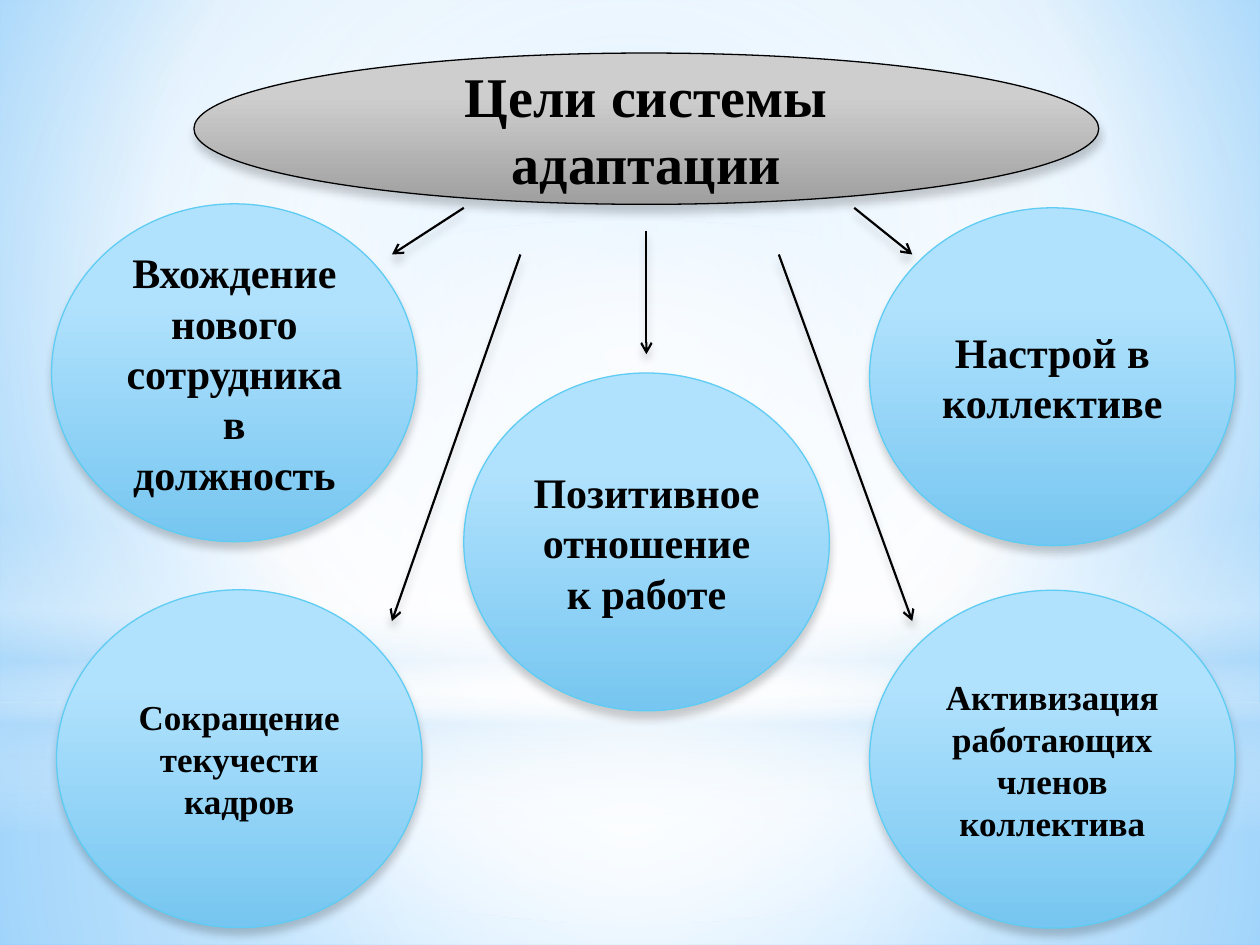
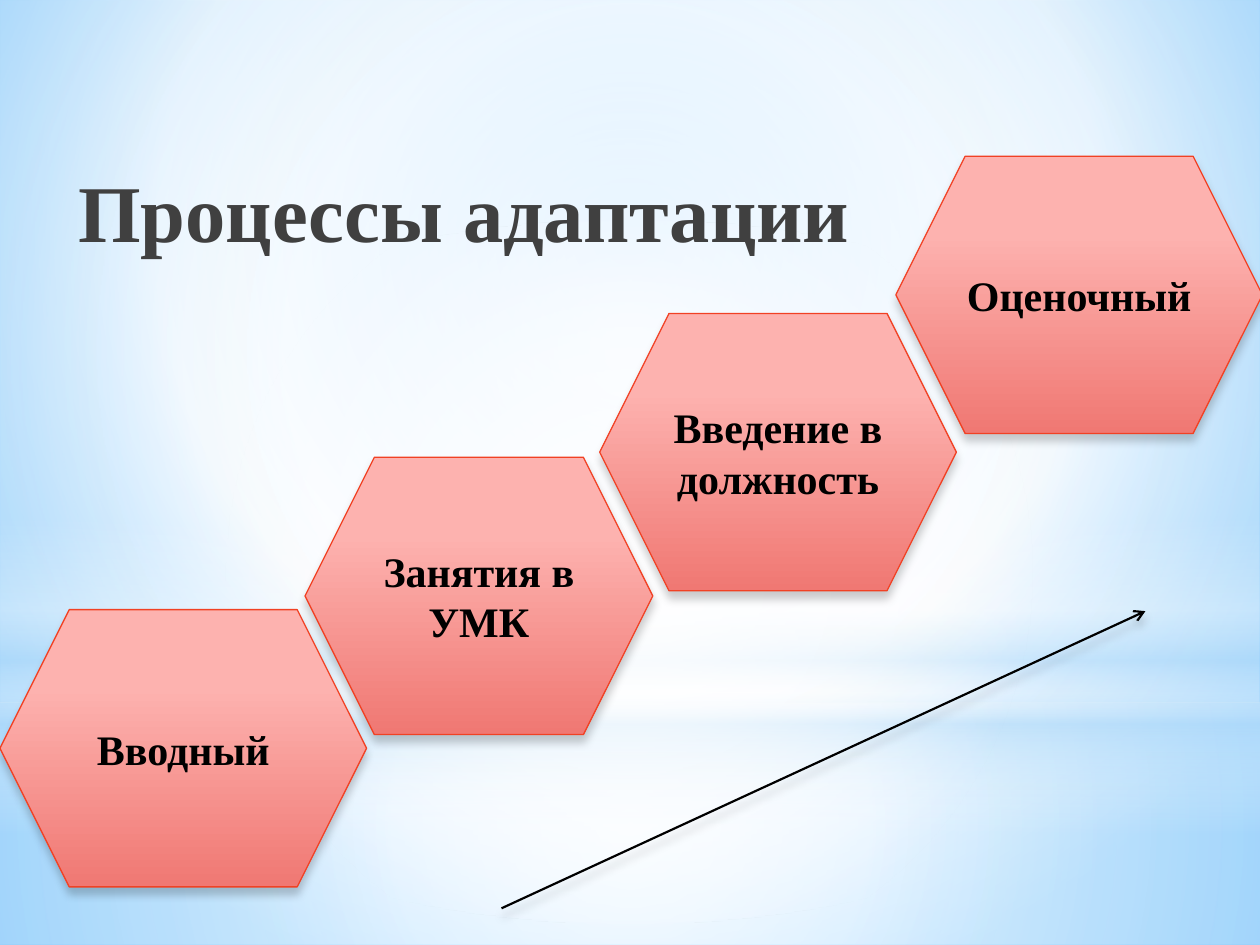
from lxml import etree
from pptx import Presentation
from pptx import util as u
from pptx.dml import color
from pptx.enum import shapes, text
from pptx.oxml import ns

COLORS = {
    "black": "000000", "white": "FFFFFF", "title": "404040",
    "sky": "9ED5FF", "deep": "5BB9FF", "haze": "B4DCFA",
    "blue_top": "B1E2FD", "blue_end": "76C6F1", "blue_line": "5ECCF3",
    "grey_top": "CECECE", "grey_end": "9F9F9F",
    "red_top": "FDB2AF", "red_end": "F07873", "red_line": "F14124",
}
FONT = "Times New Roman"
CENTRE = (50, 50, 50, 50)
SHAPE = shapes.MSO_SHAPE
PALETTES = {
    "blue": ("blue_top", "blue_end", "blue_line"),
    "grey": ("grey_top", "grey_end", "black"),
    "red": ("red_top", "red_end", "red_line"),
}
BANDS = [
    (SHAPE.RECTANGLE, (0, 14.17, 25.4, 4.88),
     [(0, "white", 91), (37, "white", 76), (100, "haze", 79)], CENTRE),
    (SHAPE.RECTANGLE, (0, 0, 25.4, 14.17),
     [(0, "white", 89), (48, "white", 62), (100, "haze", 79)], CENTRE),
    (SHAPE.RECTANGLE, (0, 10.46, 25.4, 6.35),
     [(0, "white", 0), (29, "white", 30), (45, "haze", 40),
      (55, "white", 26), (65, "haze", 60), (100, "white", 0)], None),
    (SHAPE.OVAL, (0, 4.45, 25.4, 14.17),
     [(0, "white", 100), (56, "white", 0)], CENTRE),
]


def rgb(name):
    return color.RGBColor.from_string(COLORS[name])


def sub(parent, tag, **attrs):
    return etree.SubElement(parent, ns.qn(tag), {k: str(v) for k, v in attrs.items()})


def add_color(parent, name, alpha):
    clr = sub(parent, "a:srgbClr", val=COLORS[name])
    if alpha < 100:
        sub(clr, "a:alpha", val=alpha * 1000)


def set_gradient(fill, element, stops, focus=None):
    fill.background()
    grad = etree.Element(ns.qn("a:gradFill"), rotWithShape="1")
    stop_list = sub(grad, "a:gsLst")
    for pos, name, alpha in stops:
        add_color(sub(stop_list, "a:gs", pos=pos * 1000), name, alpha)
    if focus:
        circle = sub(grad, "a:path", path="circle")
        sub(circle, "a:fillToRect", **{k: v * 1000 for k, v in zip("ltrb", focus)})
    else:
        sub(grad, "a:lin", ang=90 * 60000, scaled=0)
    empty = next(element.iter(ns.qn("a:noFill")))
    empty.getparent().replace(empty, grad)


def add_shadow(effects):
    shadow = sub(effects, "a:outerShdw", blurRad=u.Pt(5), dist=u.Pt(4),
                 dir=90 * 60000, rotWithShape=0)
    add_color(shadow, "black", 20)


class Deck:
    def __init__(self):
        self.prs = Presentation()
        self.prs.slide_width, self.prs.slide_height = u.Cm(25.4), u.Cm(19.05)
        self.s = None

    def slide(self):
        self.s = self.prs.slides.add_slide(self.prs.slide_layouts[6])
        bg = [(0, "sky", 100), (60, "white", 100), (100, "deep", 100)]
        set_gradient(self.s.background.fill, self.s.element, bg, (20, 10, 20, 60))
        for kind, box, stops, focus in BANDS:
            sp = self.shape(kind, box, stops, focus)
            sp.line.fill.background()

    def shape(self, kind, box, stops, focus=None):
        sp = self.s.shapes.add_shape(kind, *map(u.Cm, box))
        set_gradient(sp.fill, sp.element.spPr, stops, focus)
        sp.shadow.inherit = False
        return sp

    def label(self, tf, words, size, name, align):
        tf.word_wrap = True
        tf.text = words
        p = tf.paragraphs[0]
        p.alignment = align
        r = p.runs[0]
        r.font.name, r.font.size, r.font.bold = FONT, u.Pt(size), True
        r.font.color.rgb = rgb(name)

    def node(self, kind, box, words, palette, size=24):
        top, end, line = PALETTES[palette]
        sp = self.shape(kind, box, [(28, top, 100), (100, end, 100)])
        sp.line.color.rgb = rgb(line)
        sp.line.width = u.Pt(0.75)
        add_shadow(sp.element.spPr.find(ns.qn("a:effectLst")))
        sp.text_frame.vertical_anchor = text.MSO_ANCHOR.MIDDLE
        self.label(sp.text_frame, words, size, "black", text.PP_ALIGN.CENTER)

    def title(self, box, words):
        sp = self.s.shapes.add_textbox(*map(u.Cm, box))
        self.label(sp.text_frame, words, 46, "title", text.PP_ALIGN.RIGHT)

    def arrow(self, *ends):
        line = self.s.shapes.add_connector(shapes.MSO_CONNECTOR.STRAIGHT, *map(u.Cm, ends))
        line.line.color.rgb = rgb("black")
        line.line.width = u.Pt(1.25)
        sp_pr = line.element.spPr
        sub(sp_pr.find(ns.qn("a:ln")), "a:tailEnd", type="arrow")
        add_shadow(sub(sp_pr, "a:effectLst"))


def goals(deck):
    deck.slide()
    deck.node(SHAPE.OVAL, (3.91, 1.07, 18.24, 3.05), "Цели системы адаптации", "grey", 32)
    for left, top, words, size in [
        (1.14, 11.89, "Сокращение текучести кадров", 20),
        (1.04, 4.11, "Вхождение нового сотрудника в должность", 24),
        (9.35, 7.52, "Позитивное отношение к работе", 24),
        (17.53, 4.19, "Настрой в коллективе", 24),
        (17.53, 11.9, "Активизация работающих членов коллектива", 20),
    ]:
        deck.node(SHAPE.OVAL, (left, top, 7.37, 6.81), words, "blue", size)
    for ends in [
        (9.35, 4.19, 7.9, 5.13),
        (13.03, 4.65, 13.03, 7.14),
        (17.22, 4.19, 18.39, 5.13),
        (10.49, 5.13, 7.9, 12.52),
        (15.7, 5.13, 18.39, 12.52),
    ]:
        deck.arrow(*ends)


def processes(deck):
    deck.slide()
    deck.title((-0.71, 3.15, 18.08, 3.18), "Процессы адаптации")
    for left, top, width, words in [
        (0, 12.29, 7.39, "Вводный"),
        (6.15, 9.22, 7.01, "Занятия в УМК"),
        (12.09, 6.32, 7.19, "Введение в должность"),
        (18.06, 3.15, 7.39, "Оценочный"),
    ]:
        deck.node(SHAPE.HEXAGON, (left, top, width, 5.59), words, "red")
    deck.arrow(10.11, 18.31, 23.09, 12.32)


def main():
    deck = Deck()
    goals(deck)
    processes(deck)
    deck.prs.save("out.pptx")


if __name__ == "__main__":
    main()
